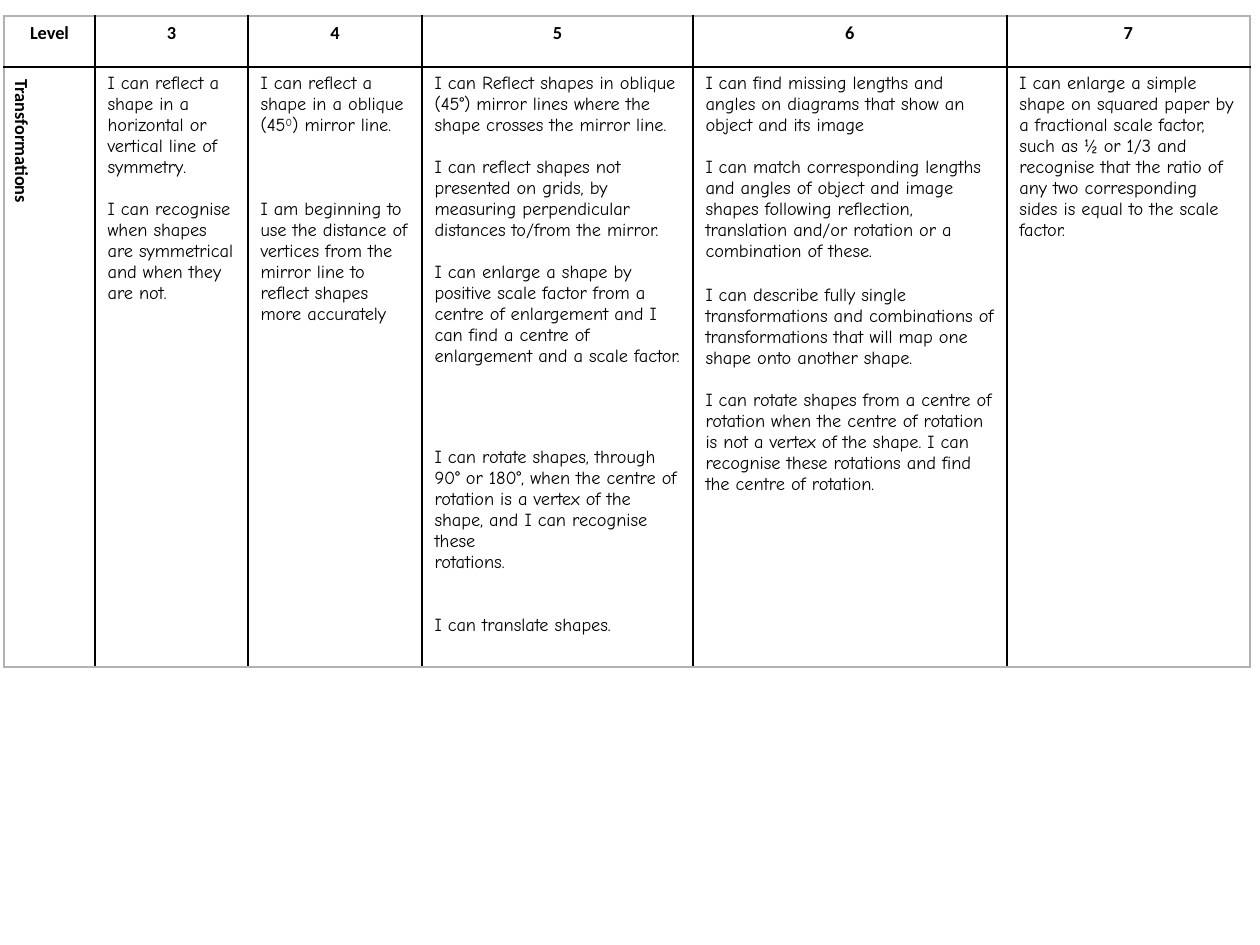
from lxml import etree
from pptx import Presentation
from pptx import util as u
from pptx.dml import color
from pptx.enum import text
from pptx.oxml import ns

PX = u.Inches(1) // 126
HUES = {"ink": "000000", "edge": "B2B2B2"}
COLS = [91, 153, 174, 271, 314, 243]
ROWS = [51, 600]
HEADS = ["Level", "3", "4", "5", "6", "7"]
GOALS = [
    [
        (0, "I can reflect a shape in a horizontal or vertical line of symmetry."),
        (12, "I can recognise when shapes are symmetrical and when they are not."),
    ],
    [
        (0, "I can reflect a shape in a oblique (45^0^) mirror line."),
        (36, "I am beginning to use the distance of vertices from the mirror line to reflect shapes more accurately"),
    ],
    [
        (0, "I can Reflect shapes in oblique (45°) mirror lines where the shape crosses the mirror line."),
        (12, "I can reflect shapes not presented on grids, by measuring perpendicular distances to/from the mirror."),
        (12, "I can enlarge a shape by positive scale factor from a centre of enlargement and I can find a centre of enlargement and a scale factor."),
        (46, "I can rotate shapes, through 90° or 180°, when the centre of rotation is a vertex of the shape, and I can recognise these"),
        (0, "rotations."),
        (24, "I can translate shapes."),
    ],
    [
        (0, "I can find missing lengths and angles on diagrams that show an object and its image"),
        (12, "I can match corresponding lengths and angles of object and image shapes following reflection, translation and/or rotation or a combination of these."),
        (13, "I can describe fully single transformations and combinations of transformations that will map one shape onto another shape."),
        (12, "I can rotate shapes from a centre of rotation when the centre of rotation is not a vertex of the shape. I can recognise these rotations and find the centre of rotation."),
    ],
    [
        (0, "I can enlarge a simple shape on squared paper by a fractional scale factor, such as ½ or 1/3 and recognise that the ratio of any two corresponding sides is equal to the scale factor."),
    ],
]


def write(frame, items, font="Comic Neue", bold=False, align=text.PP_ALIGN.LEFT):
    for i, (gap, words) in enumerate(items):
        para = frame.add_paragraph() if i else frame.paragraphs[0]
        para.alignment = align
        para.space_before = u.Pt(gap)
        for j, part in enumerate(words.split("^")):
            run = para.add_run()
            run.text = part
            run.font.name = font
            run.font.size = u.Pt(10.5)
            run.font.bold = bold
            run.font.color.rgb = color.RGBColor.from_string(HUES["ink"])
            if j % 2:
                run.font._element.set("baseline", "30000")


def border(cell, row, col):
    props = cell._tc.get_or_add_tcPr()
    outer = {
        "lnL": col == 0,
        "lnR": col == len(COLS) - 1,
        "lnT": row == 0,
        "lnB": row == len(ROWS) - 1,
    }
    for side, edge in outer.items():
        line = etree.SubElement(props, ns.qn(f"a:{side}"), w=str(u.Pt(1)))
        fill = etree.SubElement(line, ns.qn("a:solidFill"))
        hue = HUES["edge" if edge else "ink"]
        etree.SubElement(fill, ns.qn("a:srgbClr"), val=hue)
    cell.fill.background()


def grid(slide):
    box = slide.shapes.add_table(
        len(ROWS), len(COLS), 4 * PX, 16 * PX, sum(COLS) * PX, sum(ROWS) * PX
    )
    table = box.table
    table.first_row = table.horz_banding = False
    for col, wide in zip(table.columns, COLS):
        col.width = wide * PX
    for row, high in zip(table.rows, ROWS):
        row.height = high * PX
    for r in range(len(ROWS)):
        for c in range(len(COLS)):
            border(table.cell(r, c), r, c)
    return table


def main():
    deck = Presentation()
    deck.slide_width, deck.slide_height = u.Inches(10), u.Inches(7.5)
    table = grid(deck.slides.add_slide(deck.slide_layouts[6]))
    for c, head in enumerate(HEADS):
        write(table.cell(0, c).text_frame, [(0, head)], font="Calibri",
              bold=True, align=text.PP_ALIGN.CENTER)
    topic = table.cell(1, 0)
    topic._tc.get_or_add_tcPr().set("vert", "vert")
    write(topic.text_frame, [(0, "Transformations")], font="Calibri", bold=True)
    for c, goals in enumerate(GOALS, 1):
        write(table.cell(1, c).text_frame, goals)
    deck.save("out.pptx")


if __name__ == "__main__":
    main()
